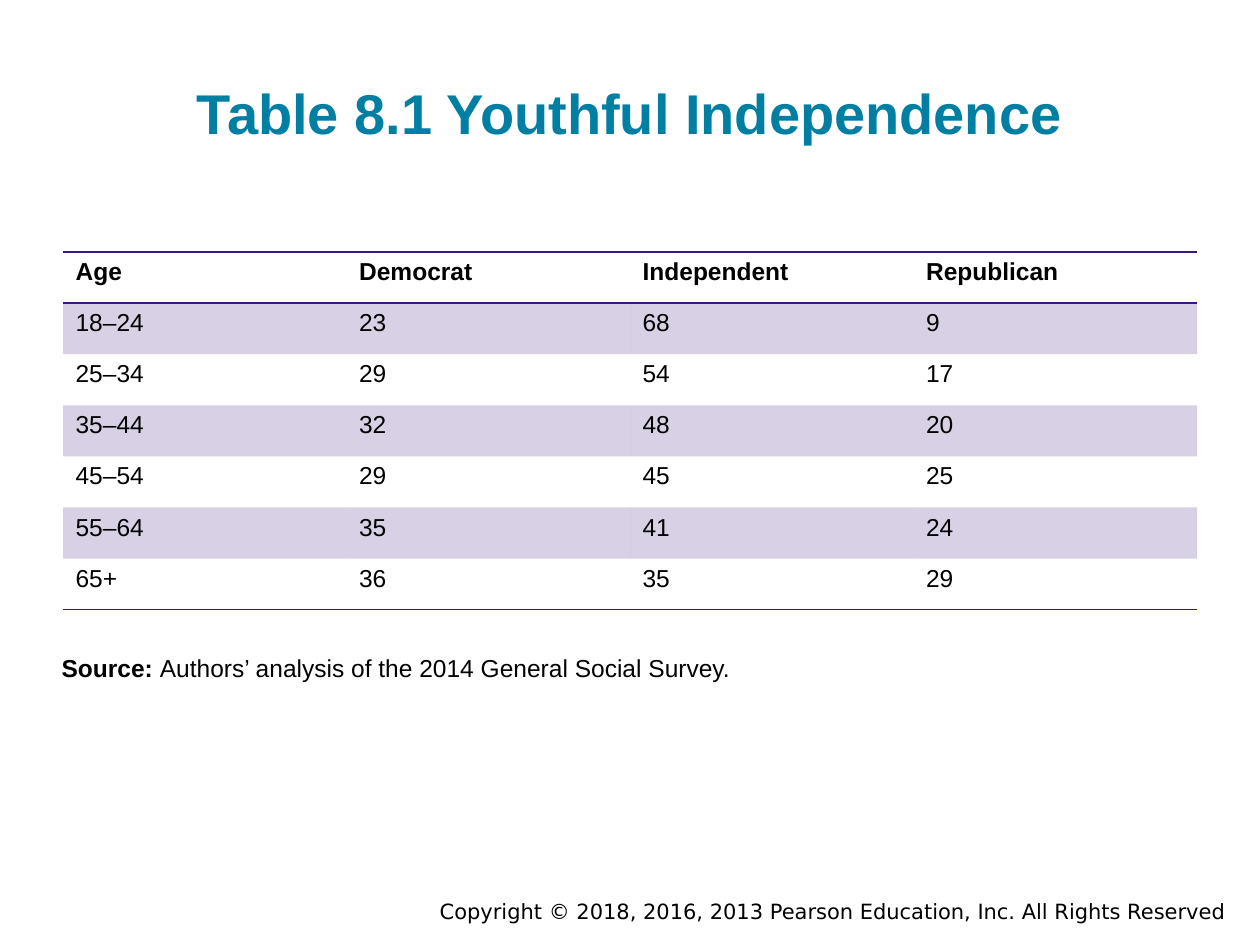
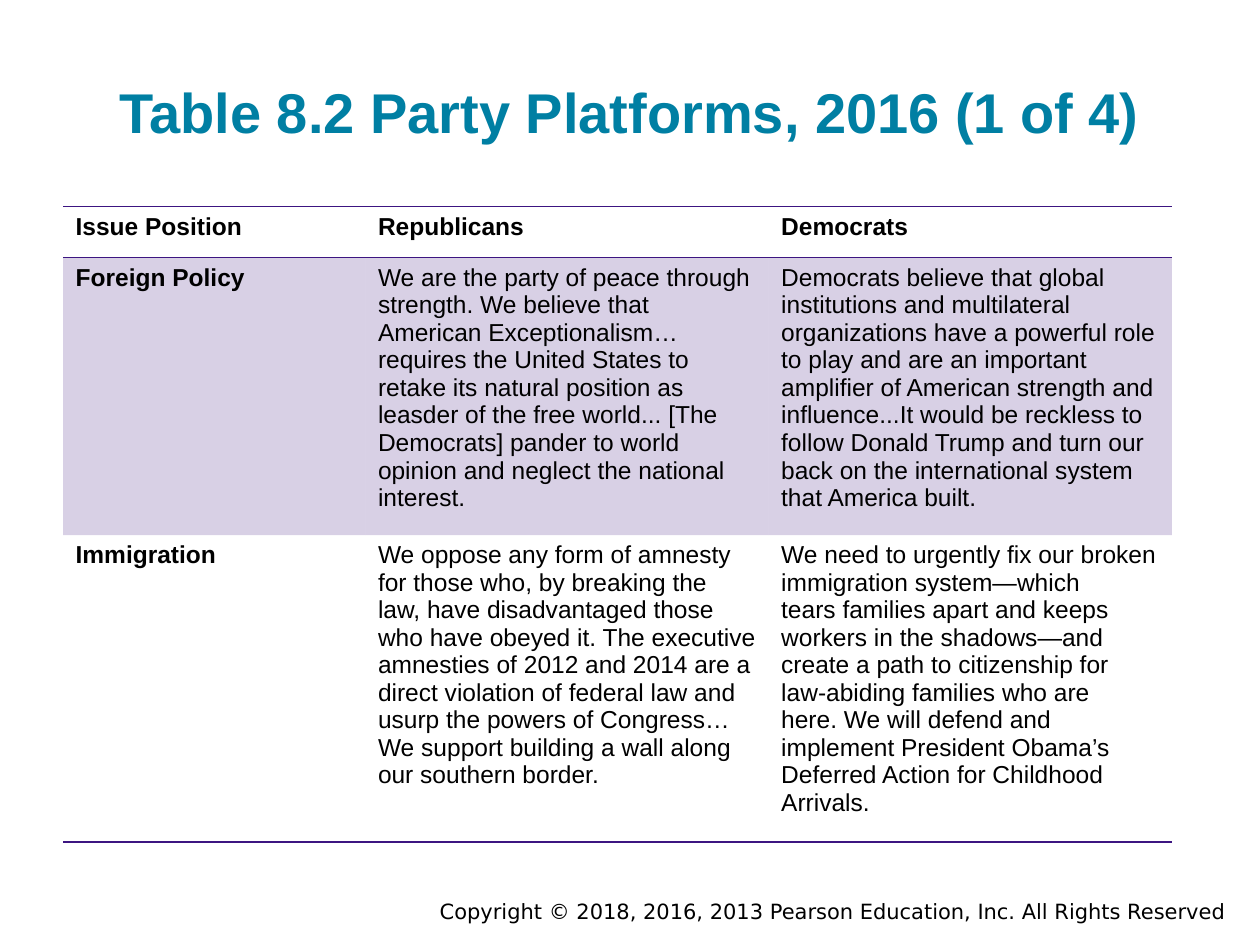
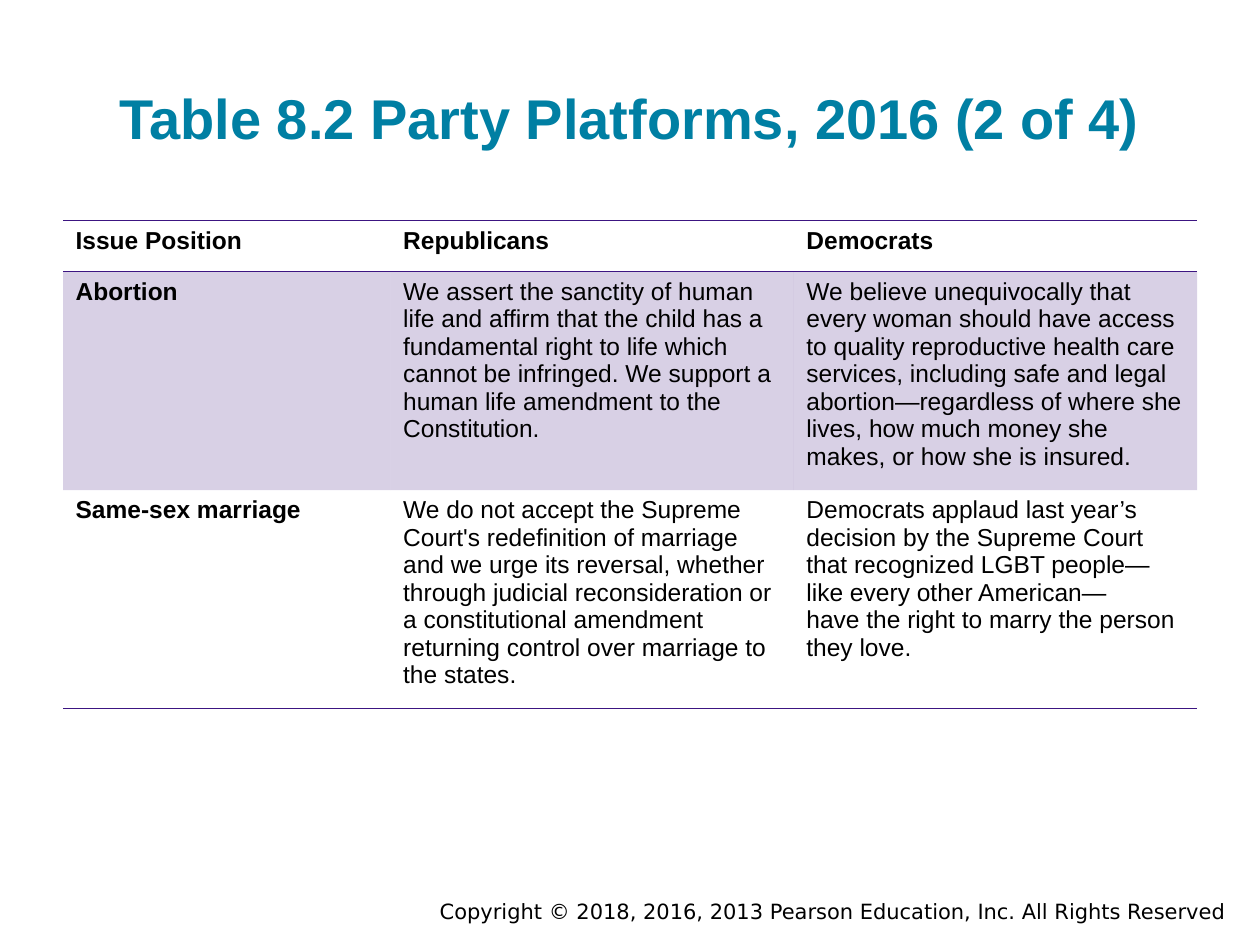
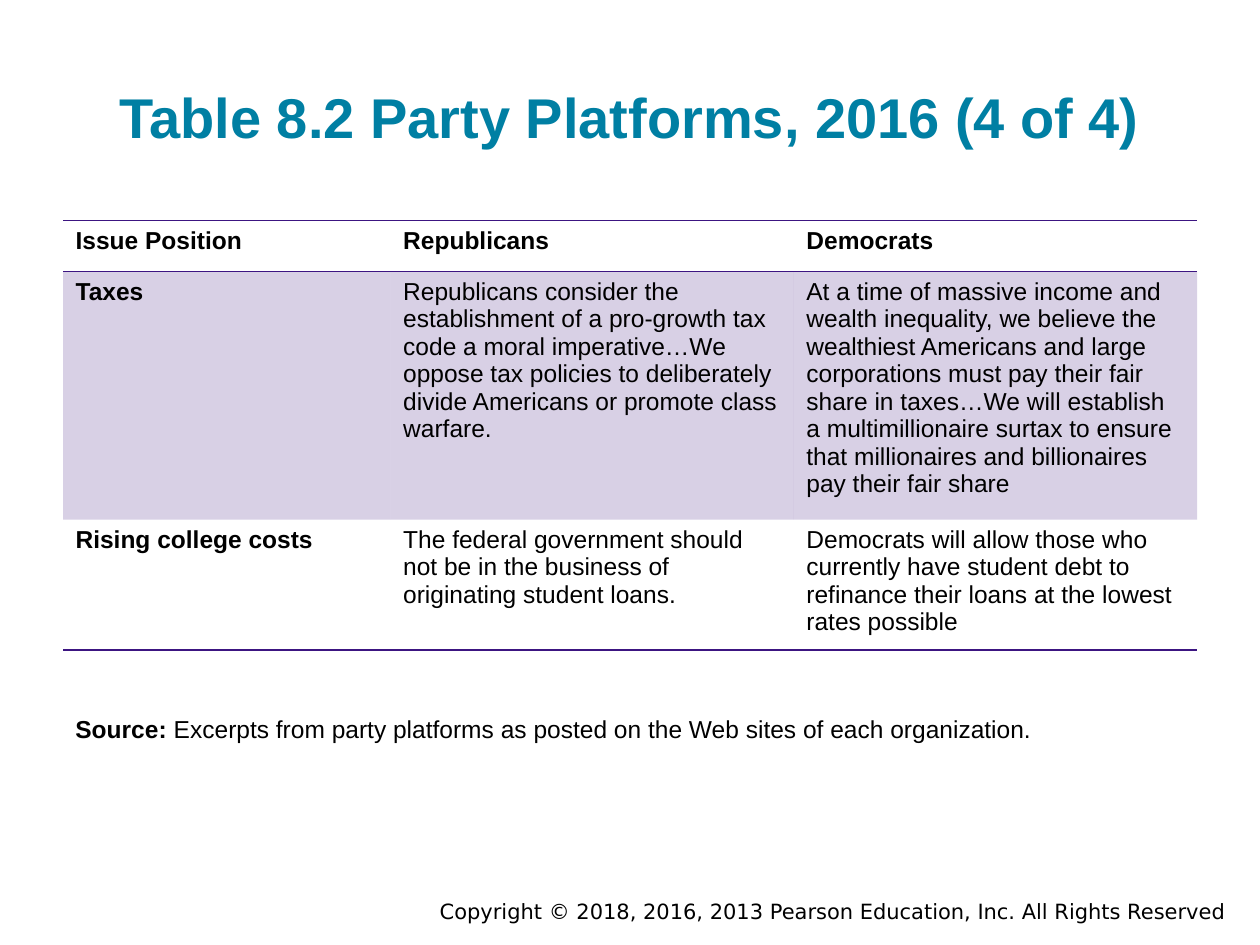
import pptx
import pptx.dml.color
import pptx.enum.text
import pptx.oxml
import pptx.oxml.ns
import pptx.util

Inches = pptx.util.Inches
Pt = pptx.util.Pt
RGBColor = pptx.dml.color.RGBColor
PP_ALIGN = pptx.enum.text.PP_ALIGN
MSO_ANCHOR = pptx.enum.text.MSO_ANCHOR
qn = pptx.oxml.ns.qn

TEAL = RGBColor(0x00, 0x7F, 0xA3)
PURPLE = RGBColor(0x3C, 0x15, 0x81)
BLACK = RGBColor(0, 0, 0)

FONT = "Arial"
FOOTER_FONT = "DejaVu Sans"
BODY_SIZE = 14
ROW_HEIGHT = Inches(2.84) // 7
BAND_OPACITY = 20
NO_STYLE_NO_GRID = "{2D5ABB26-0587-4C30-8999-92F81FD0307C}"
COPYRIGHT = "Copyright © 2018, 2016, 2013 Pearson Education, Inc. All Rights Reserved"

AGE_ROWS = [
    ["Age", "Democrat", "Independent", "Republican"],
    ["18–24", "23", "68", "9"],
    ["25–34", "29", "54", "17"],
    ["35–44", "32", "48", "20"],
    ["45–54", "29", "45", "25"],
    ["55–64", "35", "41", "24"],
    ["65+", "36", "35", "29"],
]
PLATFORM_HEADER = ["Issue Position", "Republicans", "Democrats"]
# In cell text, \n starts a paragraph and \v breaks a line.
SECURITY_ROWS = [
    PLATFORM_HEADER,
    ["Foreign Policy",
     "We are the party of peace through strength. We believe that American "
     "Exceptionalism… requires the United States to retake its natural position as "
     "leasder of the free world... [The Democrats] pander to world opinion and "
     "neglect the national interest.",
     "Democrats believe that global institutions and multilateral organizations have "
     "a powerful role to play and are an important amplifier of American strength "
     "and influence...It would be reckless to follow Donald Trump and turn our back "
     "on the international system that America built."],
    ["Immigration",
     "We oppose any form of amnesty for those who, by breaking the law, have "
     "disadvantaged those who have obeyed it. The executive amnesties of 2012 and "
     "2014 are a direct violation of federal law and usurp the powers of Congress… "
     "We support building a wall along our southern border.",
     "We need to urgently fix our broken immigration system—which\n"
     "tears families apart and keeps workers in the shadows—and\n"
     "create a path to citizenship for \vlaw-abiding families who are\n"
     "here. We will defend and implement President Obama’s\n"
     "Deferred Action for Childhood Arrivals."],
]
SOCIAL_ROWS = [
    PLATFORM_HEADER,
    ["Abortion",
     "We assert the sanctity of human life and affirm that the child has a "
     "fundamental right to life which cannot be infringed. We support a human life "
     "amendment to the Constitution.",
     "We believe unequivocally that every woman should have access to quality "
     "reproductive health care services, including safe and legal "
     "abortion—regardless of where she lives, how much money she makes, or how she "
     "is insured."],
    ["Same-sex marriage",
     "We do not accept the Supreme Court's redefinition of marriage and we urge its "
     "reversal, whether through judicial reconsideration or a constitutional "
     "amendment returning control over marriage to the states.",
     "Democrats applaud last year’s decision by the Supreme Court\n"
     "that recognized LGBT people—like every other American—\n"
     "have the right to marry the person they love."],
]
ECONOMY_ROWS = [
    PLATFORM_HEADER,
    ["Taxes",
     "Republicans consider the establishment of a pro-growth tax code a moral "
     "imperative…We oppose tax policies to deliberately divide Americans or promote "
     "class warfare.",
     "At a time of massive income and wealth inequality, we believe the wealthiest "
     "Americans and large corporations must pay their fair share in taxes…We will "
     "establish a multimillionaire surtax to ensure that millionaires and "
     "billionaires pay their fair share"],
    ["Rising college costs",
     "The federal government should not be in the business of originating student "
     "loans.",
     "Democrats will allow those who currently have student debt to refinance their "
     "loans at the lowest rates possible"],
]


class Deck:
    def __init__(self):
        self.prs = pptx.Presentation()
        self.prs.slide_width, self.prs.slide_height = Inches(10), Inches(7.5)
        self.slide = None

    def add_slide(self, title, title_top, title_height):
        self.slide = self.prs.slides.add_slide(self.prs.slide_layouts[6])
        p = self.text_box(2, 7.08, 7.83, 0.3, PP_ALIGN.RIGHT)
        self.run(p, COPYRIGHT, size=12, font=FOOTER_FONT)
        p = self.text_box(0.5, title_top, 9, title_height, PP_ALIGN.CENTER,
                          MSO_ANCHOR.BOTTOM, margin=0.1)
        self.run(p, title, size=32, bold=True, color=TEAL)

    def text_box(self, left, top, width, height, align=PP_ALIGN.LEFT,
                 anchor=MSO_ANCHOR.TOP, margin=0.05):
        """Add a wrapping box and return its first paragraph."""
        sp = self.slide.shapes.add_textbox(Inches(left), Inches(top),
                                           Inches(width), Inches(height))
        tf = sp.text_frame
        tf.word_wrap = True
        tf.vertical_anchor = anchor
        tf.margin_top = tf.margin_bottom = Inches(margin)
        p = tf.paragraphs[0]
        p.alignment = align
        return p

    def run(self, p, text, size=BODY_SIZE, bold=False, color=BLACK, font=FONT):
        r = p.add_run()
        r.text = text
        r.font.name = font
        r.font.size = Pt(size)
        r.font.bold = bold
        r.font.color.rgb = color

    def source(self, text, left, top, width):
        p = self.text_box(left, top, width, 0.34)
        self.run(p, "Source: ", bold=True)
        self.run(p, text)

    def table(self, rows, top, height, col_widths, bold_first_col=True):
        frame = self.slide.shapes.add_table(
            len(rows), len(col_widths), Inches(0.5), Inches(top),
            Inches(sum(col_widths)), Inches(height))
        table = frame.table
        table.horz_banding = False
        table._tbl.tblPr.find(qn("a:tableStyleId")).text = NO_STYLE_NO_GRID
        for column, width in zip(table.columns, col_widths):
            column.width = Inches(width)
        for row in table.rows:
            row.height = ROW_HEIGHT
        frame.height = Inches(height)

        last = len(rows) - 1
        for i, row in enumerate(rows):
            sides = {0: ["lnT", "lnB"], last: ["lnB"]}.get(i, [])
            for j, text in enumerate(row):
                cell = table.cell(i, j)
                self.cell_text(cell, text, i == 0 or (bold_first_col and j == 0))
                self.cell_fill(cell, banded=i % 2 == 1)
                self.cell_borders(cell, sides)

    def cell_text(self, cell, text, bold):
        tf = cell.text_frame
        for k, paragraph in enumerate(text.split("\n")):
            p = tf.add_paragraph() if k else tf.paragraphs[0]
            for n, line in enumerate(paragraph.split("\v")):
                if n:
                    p.add_line_break()
                self.run(p, line, bold=bold)

    def cell_fill(self, cell, banded):
        if not banded:
            cell.fill.background()
            return
        cell.fill.solid()
        cell.fill.fore_color.rgb = PURPLE
        color = cell._tc.tcPr.find(qn("a:solidFill"))[0]
        color.append(pptx.oxml.parse_xml(
            f'<a:alpha {pptx.oxml.ns.nsdecls("a")} val="{BAND_OPACITY * 1000}"/>'))

    def cell_borders(self, cell, sides):
        """Draw the borders; they must come before the fill in the cell."""
        for index, side in enumerate(sides):
            cell._tc.tcPr.insert(index, pptx.oxml.parse_xml(
                f'<a:{side} {pptx.oxml.ns.nsdecls("a")} w="{Pt(1)}"><a:solidFill>'
                f'<a:srgbClr val="{PURPLE}"/></a:solidFill></a:{side}>'))


def main():
    deck = Deck()

    deck.add_slide("Table 8.1 Youthful Independence", 0.26, 1)
    deck.table(AGE_ROWS, 2, 2.84, [2.25] * 4, bold_first_col=False)
    deck.source("Authors’ analysis of the 2014 General Social Survey.", 0.39, 5.13, 5.92)

    deck.add_slide("Table 8.2 Party Platforms, 2016 (1 of 4)", 0.24, 1.01)
    deck.table(SECURITY_ROWS, 1.64, 5.04, [2.4, 3.2, 3.2])

    deck.add_slide("Table 8.2 Party Platforms, 2016 (2 of 4)", 0.5, 0.8)
    deck.table(SOCIAL_ROWS, 1.75, 3.87, [2.6, 3.2, 3.2])

    deck.add_slide("Table 8.2 Party Platforms, 2016 (4 of 4)", 0.24, 1.05)
    deck.table(ECONOMY_ROWS, 1.75, 3.41, [2.6, 3.2, 3.2])
    deck.source("Excerpts from party platforms as posted on the Web sites of each "
                "organization.", 0.5, 5.62, 8.75)

    deck.prs.save("out.pptx")


if __name__ == "__main__":
    main()
